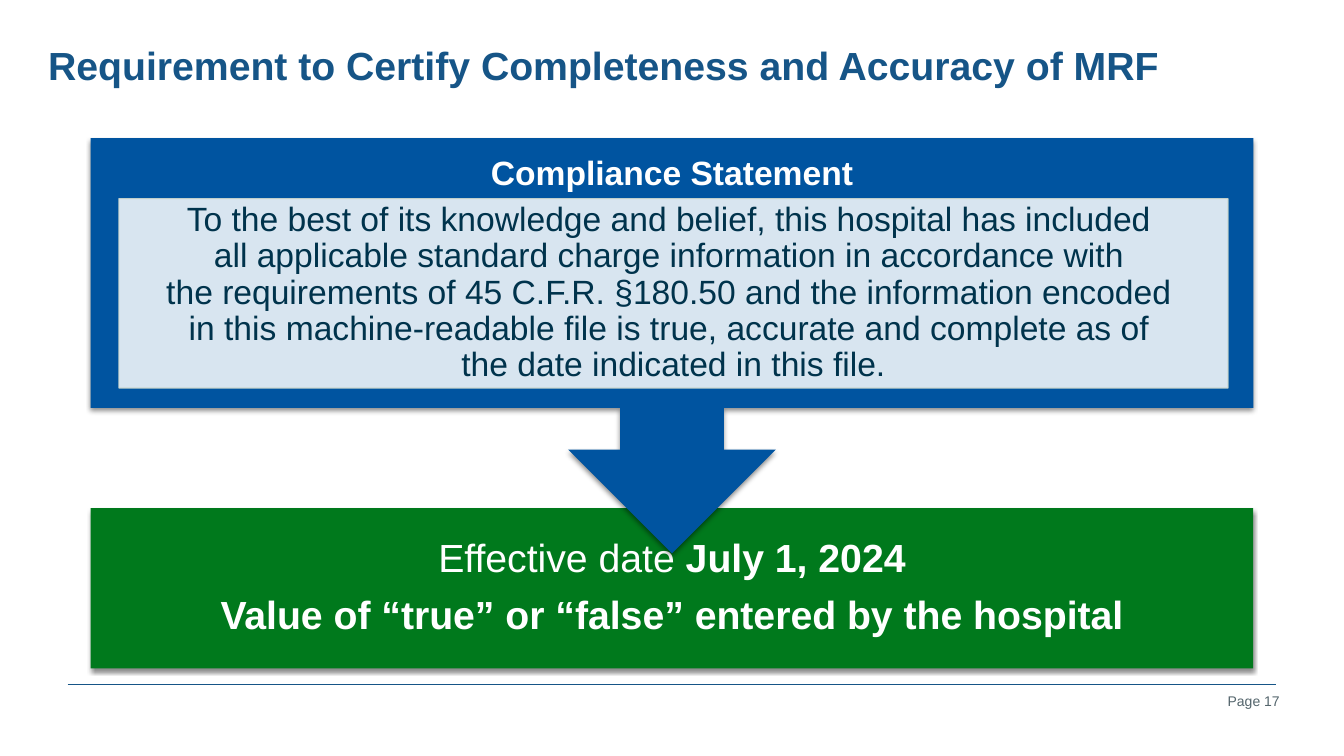
from dataclasses import dataclass
from lxml import etree
from pptx import Presentation
from pptx.dml.color import RGBColor
from pptx.enum.shapes import MSO_CONNECTOR, MSO_SHAPE
from pptx.enum.text import MSO_ANCHOR, PP_ALIGN
from pptx.oxml.ns import qn
from pptx.util import Pt

RECT, CALLOUT = MSO_SHAPE.RECTANGLE, MSO_SHAPE.UP_ARROW_CALLOUT
LINE = MSO_CONNECTOR.STRAIGHT
TOP, MIDDLE = MSO_ANCHOR.TOP, MSO_ANCHOR.MIDDLE
LEFT, CENTER, RIGHT = PP_ALIGN.LEFT, PP_ALIGN.CENTER, PP_ALIGN.RIGHT
SCALE = 9144  # EMU per px, 100 px to the inch


@dataclass(frozen=True)
class Theme:
    font: str = "Arial"
    title: str = "165587"
    blue: str = "0054A0"
    green: str = "00791C"
    pale: str = "FEFFFF"
    edge: str = "CCD7CD"
    ink: str = "00334C"
    white: str = "FFFFFF"
    gray: str = "54656C"
    shade: str = "000000"
    large: int = 28
    body: int = 24
    small: int = 10


class Deck:
    def __init__(self, theme):
        self.theme = theme
        self.file = Presentation()
        self.file.slide_width = 1333 * SCALE
        self.file.slide_height = 750 * SCALE
        self.slide = self.file.slides.add_slide(self.file.slide_layouts[6])

    def place(self, box):
        return [n * SCALE for n in box]

    def fade(self, color, percent):
        etree.SubElement(color, qn("a:alpha"), val=str(percent * 1000))

    def shadow(self, shape):
        effects = shape._element.spPr.find(qn("a:effectLst"))
        outer = etree.SubElement(
            effects, qn("a:outerShdw"), blurRad=str(Pt(3)),
            dist=str(Pt(2.4)), dir="5400000", rotWithShape="0")
        color = etree.SubElement(outer, qn("a:srgbClr"), val=self.theme.shade)
        self.fade(color, 45)

    def shape(self, kind, box, fill, shadow=True):
        shape = self.slide.shapes.add_shape(kind, *self.place(box))
        shape.shadow.inherit = False
        shape.fill.solid()
        shape.fill.fore_color.rgb = RGBColor.from_string(fill)
        shape.line.fill.background()
        if shadow:
            self.shadow(shape)
        return shape

    def panel(self, box, fill, edge):
        shape = self.shape(RECT, box, fill, shadow=False)
        shape.line.color.rgb = RGBColor.from_string(edge)
        shape.line.width = Pt(0.79)
        colors = shape._element.spPr.iter(qn("a:srgbClr"))
        for color, percent in zip(list(colors), (85, 90)):
            self.fade(color, percent)
        return shape

    def rule(self, start, end, color):
        line = self.slide.shapes.add_connector(LINE, *self.place(start + end))
        line.line.color.rgb = RGBColor.from_string(color)
        line.line.width = Pt(0.75)
        etree.SubElement(line._element.spPr, qn("a:effectLst"))

    def label(self, box, *args, **style):
        shape = self.slide.shapes.add_textbox(*self.place(box))
        self.letter(shape, *args, **style)

    def letter(self, shape, paras, size, color, align=CENTER, anchor=MIDDLE,
               pad=(10, 5), lead=0.9, gap=0.4):
        """Each paragraph is a list of (text, bold) runs."""
        frame = shape.text_frame
        frame.word_wrap = True
        frame.vertical_anchor = anchor
        frame.margin_left = frame.margin_right = pad[0] * SCALE
        frame.margin_top = frame.margin_bottom = pad[1] * SCALE
        for i, runs in enumerate(paras):
            para = frame.add_paragraph() if i else frame.paragraphs[0]
            para.alignment = align
            para.line_spacing = lead
            para.space_after = Pt(round(size * gap))
            para.font.name = self.theme.font
            para.font.size = Pt(size)
            para.font.color.rgb = RGBColor.from_string(color)
            if len({bold for _, bold in runs}) == 1:
                para.font.bold = runs[0][1]
            for text, bold in runs:
                for j, part in enumerate(text.split("\n")):
                    if j:
                        para.add_line_break()
                    run = para.add_run()
                    run.text = part
                    if para.font.bold is None:
                        run.font.bold = bold


STATEMENT = (
    "To the best of its knowledge and belief, this hospital has included \n"
    "all applicable standard charge information in accordance with \n"
    "the requirements of 45 C.F.R. §180.50 and the information encoded \n"
    "in this machine-readable file is true, accurate and complete as of \n"
    "the date indicated in this file.")


def main():
    theme = Theme()
    deck = Deck(theme)

    # Footer
    deck.rule((67, 679), (1266, 679), theme.title)
    deck.label((1145, 682, 134, 26), [[("Page 17", False)]], theme.small,
               theme.gray, align=RIGHT, lead=1.0, gap=0)

    # Effective date
    date = deck.shape(RECT, (90, 504, 1153, 159), theme.green)
    deck.letter(date, [
        [("Effective date ", False), ("July 1, 2024", True)],
        [("Value of “true” or “false” entered by the hospital", True)],
    ], theme.large, theme.white, pad=(22, 22))

    # Compliance statement, with its arrow turned to point down
    arrow = deck.shape(CALLOUT, (90, 137, 1153, 412), theme.blue)
    arrow.rotation = 180
    deck.label((90, 137, 1153, 145), [[("Compliance Statement", True)]],
               theme.body, theme.white, anchor=TOP, pad=(19, 19))
    panel = deck.panel((118, 197, 1100, 188), theme.pale, theme.edge)
    deck.letter(panel, [[(STATEMENT, False)]], theme.body, theme.ink,
                pad=(19, 3))

    # Title
    deck.label((38, 45, 1127, 39),
               [[("Requirement to Certify Completeness and Accuracy of MRF",
                  True)]],
               theme.large, theme.title, align=LEFT, lead=1.0, gap=0)

    deck.file.save("out.pptx")


if __name__ == "__main__":
    main()
